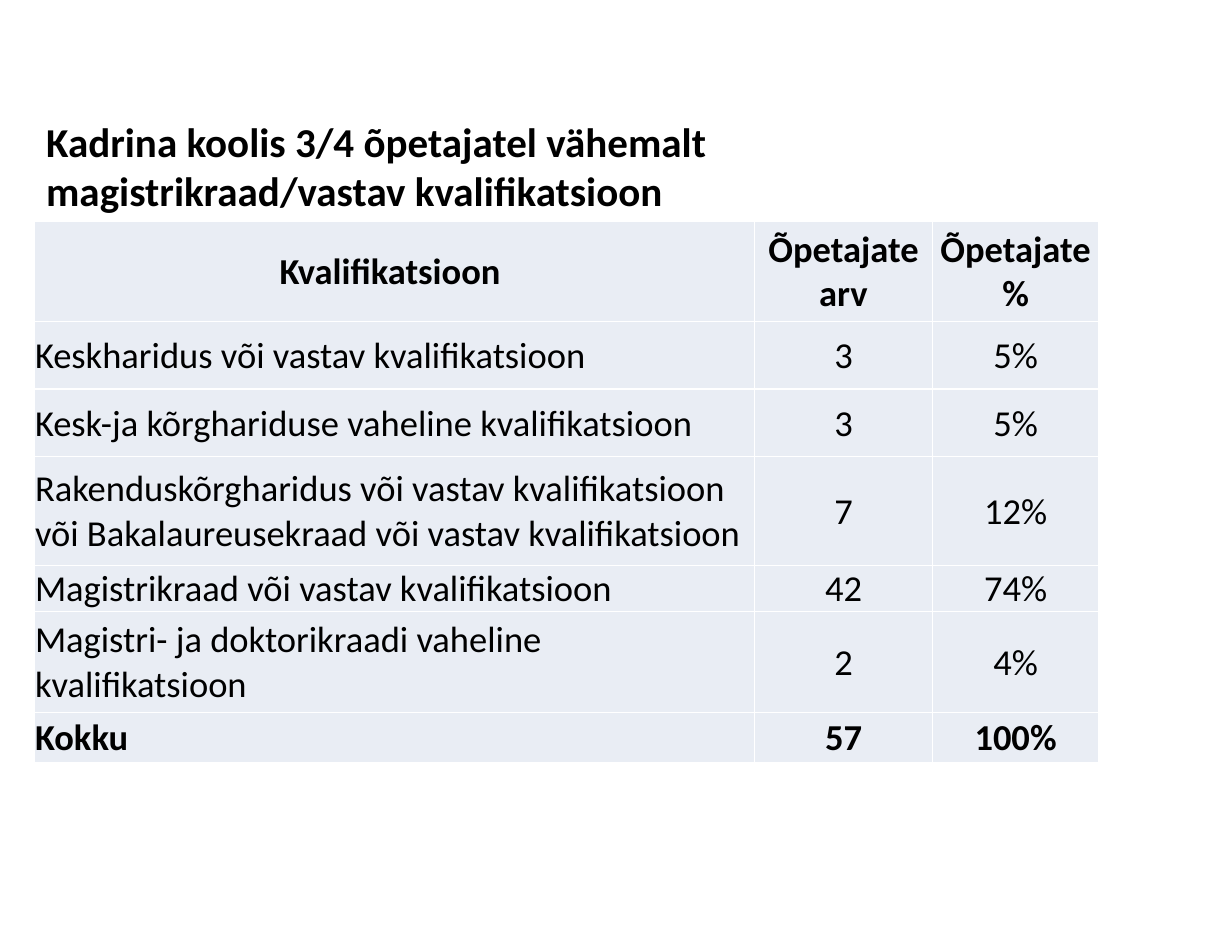
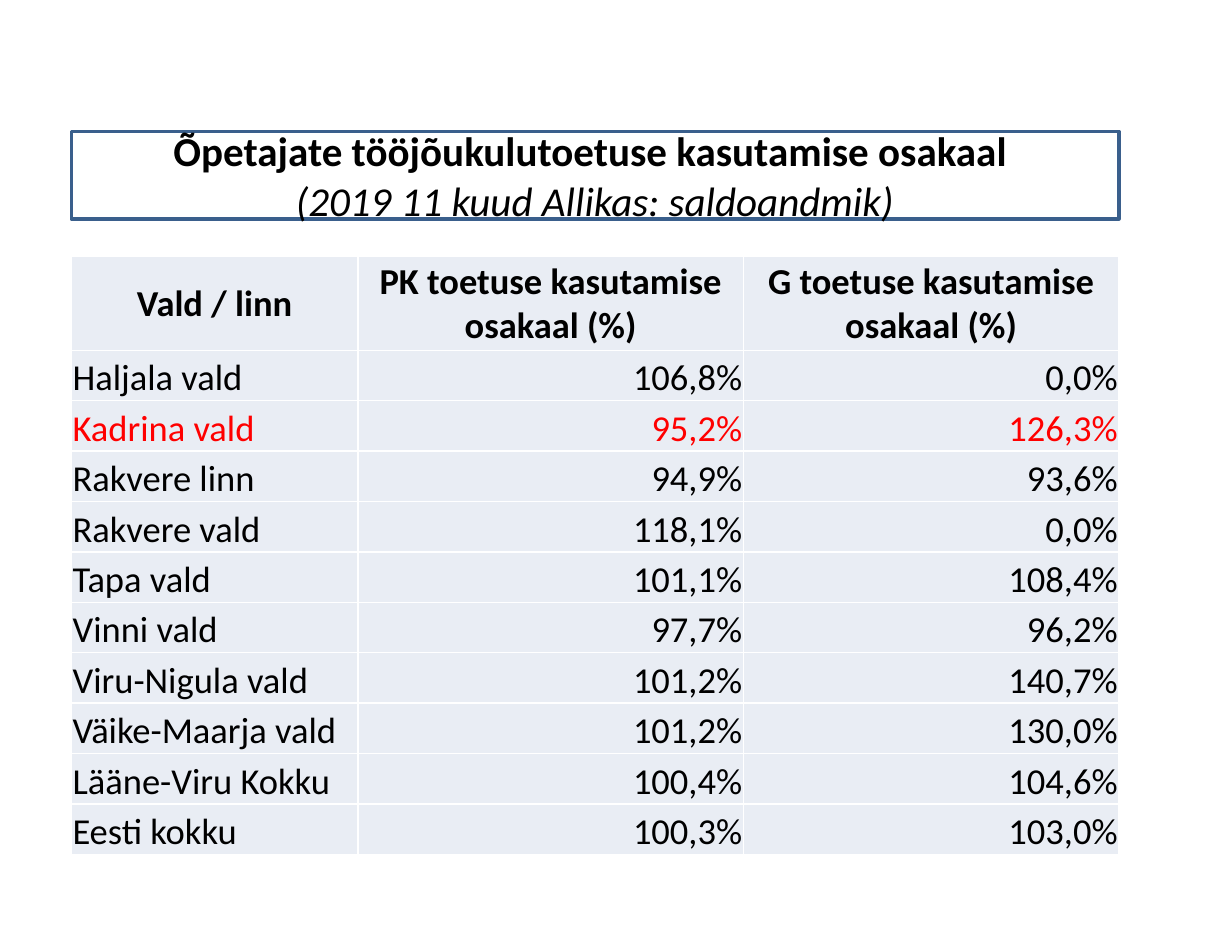
from lxml.etree import SubElement
from pptx import Presentation
from pptx.dml.color import RGBColor
from pptx.enum.shapes import MSO_SHAPE
from pptx.enum.text import MSO_ANCHOR, PP_ALIGN
from pptx.oxml.ns import qn
from pptx.util import Inches, Pt

UNITS_PER_INCH = 576
SLIDE_WIDTH = Inches(5670 / UNITS_PER_INCH)
SLIDE_HEIGHT = Inches(4309 / UNITS_PER_INCH)

BLACK = RGBColor(0x00, 0x00, 0x00)
WHITE = RGBColor(0xFF, 0xFF, 0xFF)
RED = RGBColor(0xFF, 0x00, 0x00)
CELL_FILL = RGBColor(0xE9, 0xED, 0xF4)
FRAME_BLUE = RGBColor(0x3A, 0x5F, 0x8C)

BODY = {"name": "Calibri", "size": Pt(21), "bold": False}
BOLD = BODY | {"bold": True}
TITLE = BOLD | {"size": Pt(23.6)}
SUBTITLE = TITLE | {"bold": False, "italic": True}
CELL_MARGINS = {
    "margin_left": Inches(0.01),
    "margin_right": Inches(0.01),
    "margin_top": Inches(0.01),
    "margin_bottom": 0,
}

QUALIFICATION_TITLE = [
    ("Kadrina koolis 3/4 õpetajatel vähemalt", TITLE),
    ("magistrikraad/vastav kvalifikatsioon", TITLE),
]
QUALIFICATION_ROWS = [
    ("Kvalifikatsioon ", "Õpetajate arv", "Õpetajate %"),
    ("Keskharidus või vastav kvalifikatsioon", "3", "5%"),
    ("Kesk-ja kõrghariduse vaheline kvalifikatsioon", "3", "5%"),
    ("Rakenduskõrgharidus või vastav kvalifikatsioon või Bakalaureusekraad "
     "või vastav kvalifikatsioon", "7", "12%"),
    ("Magistrikraad või vastav kvalifikatsioon", "42", "74%"),
    ("Magistri- ja doktorikraadi vaheline kvalifikatsioon", "2", "4%"),
    ("Kokku", "57", "100%"),
]
SUPPORT_TITLE = [
    ("Õpetajate tööjõukulutoetuse kasutamise osakaal ", TITLE),
    ("(2019 11 kuud Allikas: saldoandmik)", SUBTITLE),
]
SUPPORT_ROWS = [
    ("Vald / linn", "PK toetuse kasutamise osakaal (%)", "G toetuse kasutamise osakaal (%)"),
    ("Haljala vald", "106,8%", "0,0%"),
    ("Kadrina vald", "95,2%", "126,3%"),
    ("Rakvere linn", "94,9%", "93,6%"),
    ("Rakvere vald", "118,1%", "0,0%"),
    ("Tapa vald", "101,1%", "108,4%"),
    ("Vinni vald", "97,7%", "96,2%"),
    ("Viru-Nigula vald", "101,2%", "140,7%"),
    ("Väike-Maarja vald", "101,2%", "130,0%"),
    ("Lääne-Viru Kokku", "100,4%", "104,6%"),
    ("Eesti kokku", "100,3%", "103,0%"),
]


def set_values(target, values):
    for name, value in values.items():
        setattr(target, name, value)


def write(paragraph, text, style, alignment, color=BLACK):
    paragraph.alignment = alignment
    run = paragraph.add_run()
    run.text = text
    set_values(run.font, style)
    run.font.color.rgb = color


def write_title(shape, lines, alignment):
    frame = shape.text_frame
    frame.word_wrap = True
    for index, (text, style) in enumerate(lines):
        paragraph = frame.add_paragraph() if index else frame.paragraphs[0]
        write(paragraph, text, style, alignment)


def add_borders(cell):
    properties = cell._tc.get_or_add_tcPr()
    for side in ("a:lnL", "a:lnR", "a:lnT", "a:lnB"):
        border = SubElement(properties, qn(side), w=str(Pt(1)))
        fill = SubElement(border, qn("a:solidFill"))
        SubElement(fill, qn("a:srgbClr"), val=str(WHITE))


def add_data_table(slide, rows, left, top, widths, heights, value_alignment,
                   body_anchor, bold_rows=(), red_rows=()):
    frame = slide.shapes.add_table(
        len(rows), len(widths), Inches(left), Inches(top),
        Inches(sum(widths)), Inches(sum(heights)))
    table = frame.table
    table.horz_banding = False
    for column, width in zip(table.columns, widths):
        column.width = Inches(width)
    for row, height in zip(table.rows, heights):
        row.height = Inches(height)
    for row_index, texts in enumerate(rows):
        is_header = row_index == 0
        style = BOLD if is_header or texts[0] in bold_rows else BODY
        color = RED if texts[0] in red_rows else BLACK
        for column_index, text in enumerate(texts):
            cell = table.cell(row_index, column_index)
            set_values(cell, CELL_MARGINS)
            cell.vertical_anchor = MSO_ANCHOR.MIDDLE if is_header else body_anchor
            add_borders(cell)
            cell.fill.solid()
            cell.fill.fore_color.rgb = CELL_FILL
            if is_header:
                alignment = PP_ALIGN.CENTER
            else:
                alignment = value_alignment if column_index else PP_ALIGN.LEFT
            write(cell.text_frame.paragraphs[0], text, style, alignment, color)


def build_qualifications(slide):
    add_data_table(
        slide, QUALIFICATION_ROWS, 0.27, 1.77, [5.76, 1.42, 1.33],
        [0.8, 0.54, 0.54, 0.87, 0.36, 0.81, 0.4],
        PP_ALIGN.CENTER, MSO_ANCHOR.MIDDLE, bold_rows=("Kokku",))
    title = slide.shapes.add_textbox(Inches(0.27), Inches(0.88), Inches(8.51), Inches(0.9))
    write_title(title, QUALIFICATION_TITLE, PP_ALIGN.LEFT)


def build_support_use(slide):
    body_count = len(SUPPORT_ROWS) - 1
    add_data_table(
        slide, SUPPORT_ROWS, 0.57, 2.05, [2.29, 3.08, 3],
        [0.75] + [4.03 / body_count] * body_count,
        PP_ALIGN.RIGHT, MSO_ANCHOR.BOTTOM, red_rows=("Kadrina vald",))
    title = slide.shapes.add_shape(
        MSO_SHAPE.RECTANGLE, Inches(0.57), Inches(1.05), Inches(8.37), Inches(0.7))
    title.shadow.inherit = False
    title.fill.solid()
    title.fill.fore_color.rgb = WHITE
    title.line.color.rgb = FRAME_BLUE
    title.line.width = Pt(2)
    title.text_frame.vertical_anchor = MSO_ANCHOR.MIDDLE
    write_title(title, SUPPORT_TITLE, PP_ALIGN.CENTER)


def main():
    presentation = Presentation()
    presentation.slide_width = SLIDE_WIDTH
    presentation.slide_height = SLIDE_HEIGHT
    for build in (build_qualifications, build_support_use):
        build(presentation.slides.add_slide(presentation.slide_layouts[6]))
    presentation.save("out.pptx")


if __name__ == "__main__":
    main()
